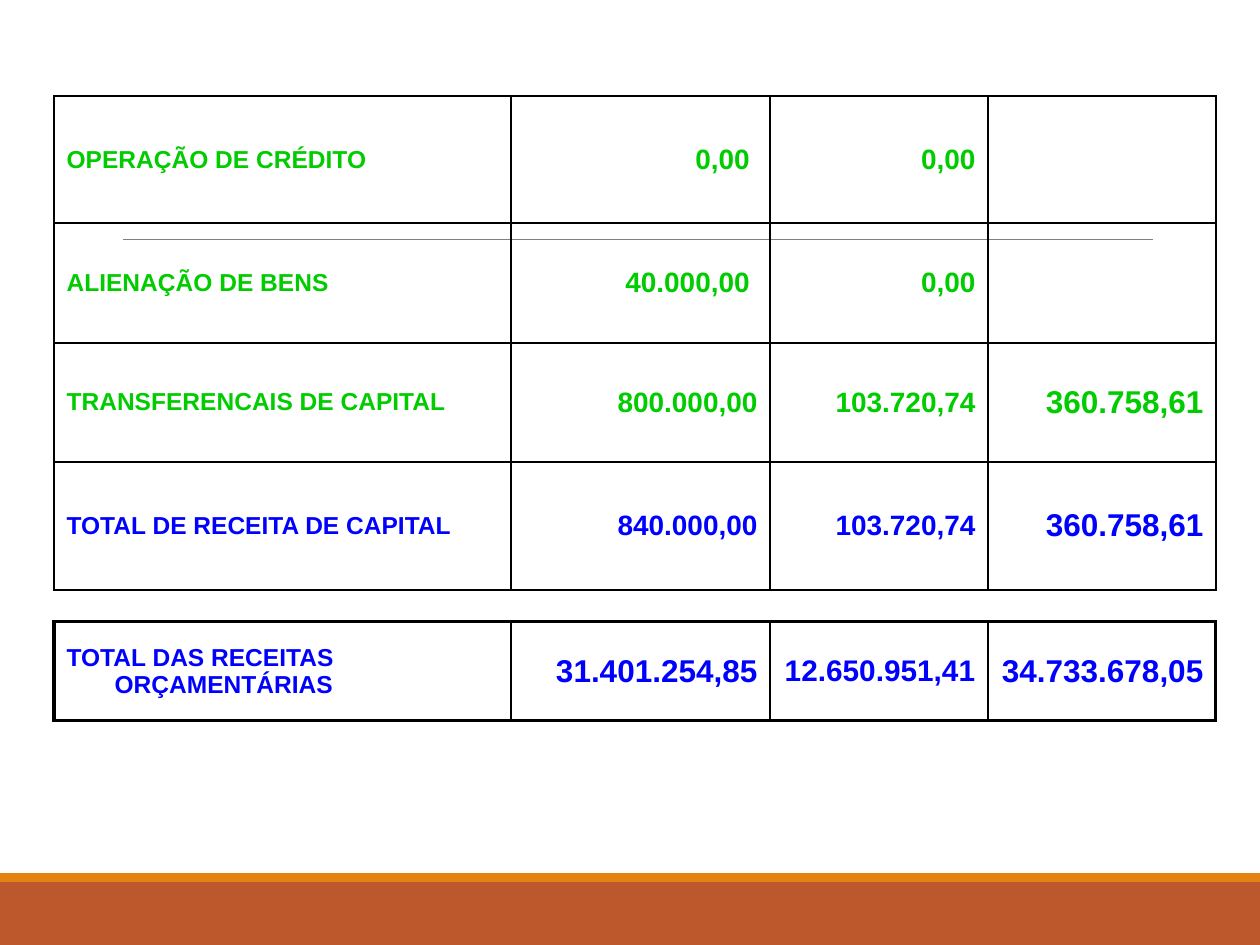
import dataclasses
import typing

import lxml.etree
import pptx
import pptx.dml.color
import pptx.enum.shapes
import pptx.enum.text
import pptx.oxml.ns
import pptx.util

SCALE = 914400 / 126
GREEN, BLUE, BLACK = "00CC00", "0000FF", "000000"
COLS = [457, 259, 218, 228]


@dataclasses.dataclass
class Row:
    high: int
    ink: str
    texts: list[str]
    sizes: list[int]
    kind: str = "plain"


@dataclasses.dataclass
class Band:
    top: int
    high: int
    fill: str


NORMAL = [14, 16, 16, 18]
ROWS = [
    Row(127, GREEN, ["OPERAÇÃO DE CRÉDITO", "0,00 ", "0,00", ""], NORMAL),
    Row(120, GREEN, ["ALIENAÇÃO DE BENS", "40.000,00 ", "0,00", ""], NORMAL),
    Row(119, GREEN, ["TRANSFERENCAIS DE CAPITAL", "800.000,00", "103.720,74", "360.758,61"], NORMAL),
    Row(128, BLUE, ["TOTAL DE RECEITA DE CAPITAL", "840.000,00", "103.720,74", "360.758,61"], NORMAL),
    Row(32, BLUE, [""] * 4, [8] * 4, "gap"),
    Row(99, BLUE, ["TOTAL DAS RECEITAS ORÇAMENTÁRIAS", "31.401.254,85", "12.650.951,41", "34.733.678,05"],
        [14, 18, 17, 18], "total"),
]
BANDS = [Band(882, 63, "BD582C"), Band(873, 9, "E48312")]


def px(n: int) -> pptx.util.Emu:
    return pptx.util.Emu(round(n * SCALE))


def color(code: str) -> pptx.dml.color.RGBColor:
    return pptx.dml.color.RGBColor.from_string(code)


def node(parent: typing.Any, tag: str, **attrs: str) -> typing.Any:
    return lxml.etree.SubElement(parent, pptx.oxml.ns.qn(tag), **attrs)


def draw_band(slide: typing.Any, band: Band) -> None:
    shape = slide.shapes.add_shape(
        pptx.enum.shapes.MSO_SHAPE.RECTANGLE, 0, px(band.top), px(1260), px(band.high))
    shape.shadow.inherit = False
    shape.fill.solid()
    shape.fill.fore_color.rgb = color(band.fill)
    shape.line.fill.background()


def draw_rule(slide: typing.Any) -> None:
    rule = slide.shapes.add_connector(
        pptx.enum.shapes.MSO_CONNECTOR.STRAIGHT, px(123), px(239), px(1153), px(239))
    rule.line.color.rgb = color("808080")
    rule.line.width = pptx.util.Pt(0.5)
    node(rule._element.spPr, "a:effectLst")


def edges(row: int, col: int) -> dict[str, int]:
    kind = ROWS[row].kind
    if kind == "gap":
        return {"L": 0, "R": 0, "T": 1, "B": 2}
    if kind == "total":
        return {"L": 2 if col == 0 else 1, "R": 2 if col == len(COLS) - 1 else 1, "T": 2, "B": 2}
    return dict.fromkeys("LRTB", 1)


def set_edges(cell: typing.Any, widths: dict[str, int]) -> None:
    props = cell._tc.get_or_add_tcPr()
    for side, width in widths.items():
        line = node(props, f"a:ln{side}", w=str(pptx.util.Pt(width)))
        if width:
            node(node(line, "a:solidFill"), "a:srgbClr", val=BLACK)
        else:
            node(line, "a:noFill")


def set_text(cell: typing.Any, row: Row, col: int) -> None:
    cell.vertical_anchor = pptx.enum.text.MSO_ANCHOR.MIDDLE
    para = cell.text_frame.paragraphs[0]
    if not row.texts[col]:
        node(para._p, "a:endParaRPr", sz=str(row.sizes[col] * 100))
        return
    cell.text = row.texts[col]
    para = cell.text_frame.paragraphs[0]
    props = para._p.get_or_add_pPr()
    props.set("marL", str(px(48)))
    props.set("indent", str(-px(48)))
    if col:
        para.alignment = pptx.enum.text.PP_ALIGN.RIGHT
    para.font.name = "Arial"
    para.font.size = pptx.util.Pt(row.sizes[col])
    para.font.bold = True
    para.font.color.rgb = color(row.ink)


def draw_table(slide: typing.Any) -> None:
    high = sum(row.high for row in ROWS)
    table = slide.shapes.add_table(
        len(ROWS), len(COLS), px(54), px(96), px(sum(COLS)), px(high)).table
    table.first_row = table.horz_banding = False
    for col, width in enumerate(COLS):
        table.columns[col].width = px(width)
    for r, row in enumerate(ROWS):
        table.rows[r].height = px(row.high)
        for c in range(len(COLS)):
            cell = table.cell(r, c)
            set_edges(cell, edges(r, c))
            cell.fill.background()
            if row.kind == "gap":
                cell.margin_top = cell.margin_bottom = 0
            set_text(cell, row, c)


def main() -> None:
    deck = pptx.Presentation()
    deck.slide_width, deck.slide_height = px(1260), px(945)
    slide = deck.slides.add_slide(deck.slide_layouts[6])
    for band in BANDS:
        draw_band(slide, band)
    draw_rule(slide)
    draw_table(slide)
    deck.save("out.pptx")


if __name__ == "__main__":
    main()
